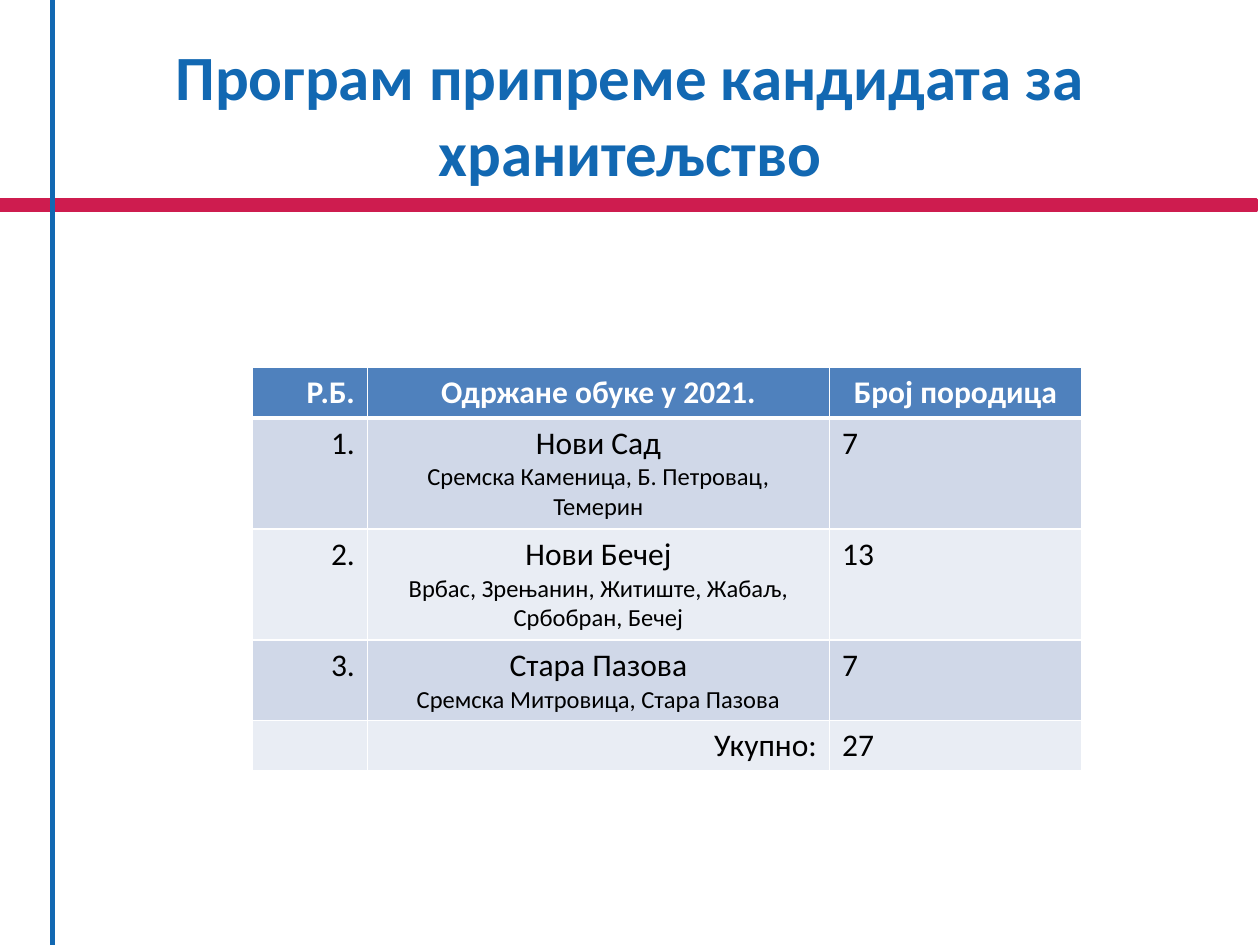
import pptx
import pptx.dml.color
import pptx.enum.shapes
import pptx.enum.text
import pptx.oxml
import pptx.oxml.ns
import pptx.util

Pt = pptx.util.Pt
ALIGN = pptx.enum.text.PP_ALIGN
ANCHOR = pptx.enum.text.MSO_ANCHOR
HUES = {"blue": "1268B2", "red": "CE1C4F", "head": "4F81BD", "odd": "D0D8E8",
        "even": "E9EDF4", "white": "FFFFFF", "black": "000000"}
SIDES = (ALIGN.RIGHT, ALIGN.CENTER, ALIGN.LEFT)
ROWS = [
    (28.5, ["Р.Б.", "Одржане обуке у 2021.", "Број породица"]),
    (63.5, ["1.", "Нови Сад\nСремска Каменица, Б. Петровац, Темерин", "7"]),
    (63.5, ["2.", "Нови Бечеј\nВрбас, Зрењанин, Житиште, Жабаљ, Србобран, Бечеј", "13"]),
    (46, ["3.", "Стара Пазова\nСремска Митровица, Стара Пазова", "7"]),
    (28.5, ["", "Укупно:", "27"]),
]


def hue(name):
    return pptx.dml.color.RGBColor.from_string(HUES[name])


def style(para, side, tint, **form):
    para.alignment = side
    para.font.color.rgb = hue(tint)
    for key, value in {"name": "Calibri", **form}.items():
        setattr(para.font, key, value)


def rules(slide, wide, high):
    """Draw the red band across the slide and the blue line down it."""
    band = slide.shapes.add_shape(pptx.enum.shapes.MSO_SHAPE.RECTANGLE,
                                  Pt(-2), Pt(114), Pt(wide), Pt(6))
    band.shadow.inherit = False
    band.fill.solid()
    band.fill.fore_color.rgb = band.line.color.rgb = hue("red")
    band.line.width = Pt(2)
    line = slide.shapes.add_connector(pptx.enum.shapes.MSO_CONNECTOR.STRAIGHT,
                                      Pt(30), Pt(0), Pt(30), Pt(high))
    line.line.color.rgb = hue("blue")
    line.line.width = Pt(3)
    props = line._element.spPr
    props.append(props.makeelement(pptx.oxml.ns.qn("a:effectLst"), {}))


def title(slide, x, y, wide, high):
    box = slide.shapes.add_textbox(Pt(x), Pt(y), Pt(wide), Pt(high))
    frame = box.text_frame
    frame.word_wrap = True
    frame.vertical_anchor = ANCHOR.MIDDLE
    frame.text = "Програм припреме кандидата за хранитељство"
    style(frame.paragraphs[0], ALIGN.CENTER, "blue", size=Pt(36), bold=True)


def edge(cell, base):
    """Rule a cell in white, with the given width below it."""
    props = cell._tc.get_or_add_tcPr()
    for spot, (tag, wide) in enumerate({"L": 1, "R": 1, "T": 1, "B": base}.items()):
        props.insert(spot, pptx.oxml.parse_xml(
            f'<a:ln{tag} {pptx.oxml.ns.nsdecls("a")} w="{Pt(wide)}"><a:solidFill>'
            f'<a:srgbClr val="{HUES["white"]}"/></a:solidFill></a:ln{tag}>'))


def table(slide, x, y, wide):
    high = sum(tall for tall, _ in ROWS)
    grid = slide.shapes.add_table(len(ROWS), 3, Pt(x), Pt(y), Pt(wide), Pt(high)).table
    for col, share in zip(grid.columns, (0.14, 0.557, 0.303)):
        col.width = Pt(round(wide * share))
    for r, (tall, words) in enumerate(ROWS):
        grid.rows[r].height = Pt(tall)
        head, last = r == 0, r == len(ROWS) - 1
        for c, text in enumerate(words):
            cell = grid.cell(r, c)
            cell.fill.solid()
            cell.fill.fore_color.rgb = hue("head" if head else "odd" if r % 2 else "even")
            edge(cell, 3 if head else 1)
            cell.text = text
            side = ALIGN.CENTER if head and c else ALIGN.RIGHT if last and c == 1 else SIDES[c]
            for n, para in enumerate(cell.text_frame.paragraphs):
                style(para, side, "white" if head else "black",
                      size=Pt(14 if n else 18), bold=head)


def main():
    deck = pptx.Presentation()
    deck.slide_width, deck.slide_height = Pt(720), Pt(540)
    slide = deck.slides.add_slide(deck.slide_layouts[6])
    rules(slide, 720, 540)
    title(slide, 36, 21.6, 648, 86.4)
    table(slide, 144, 210, 474)
    deck.save("out.pptx")


if __name__ == "__main__":
    main()
